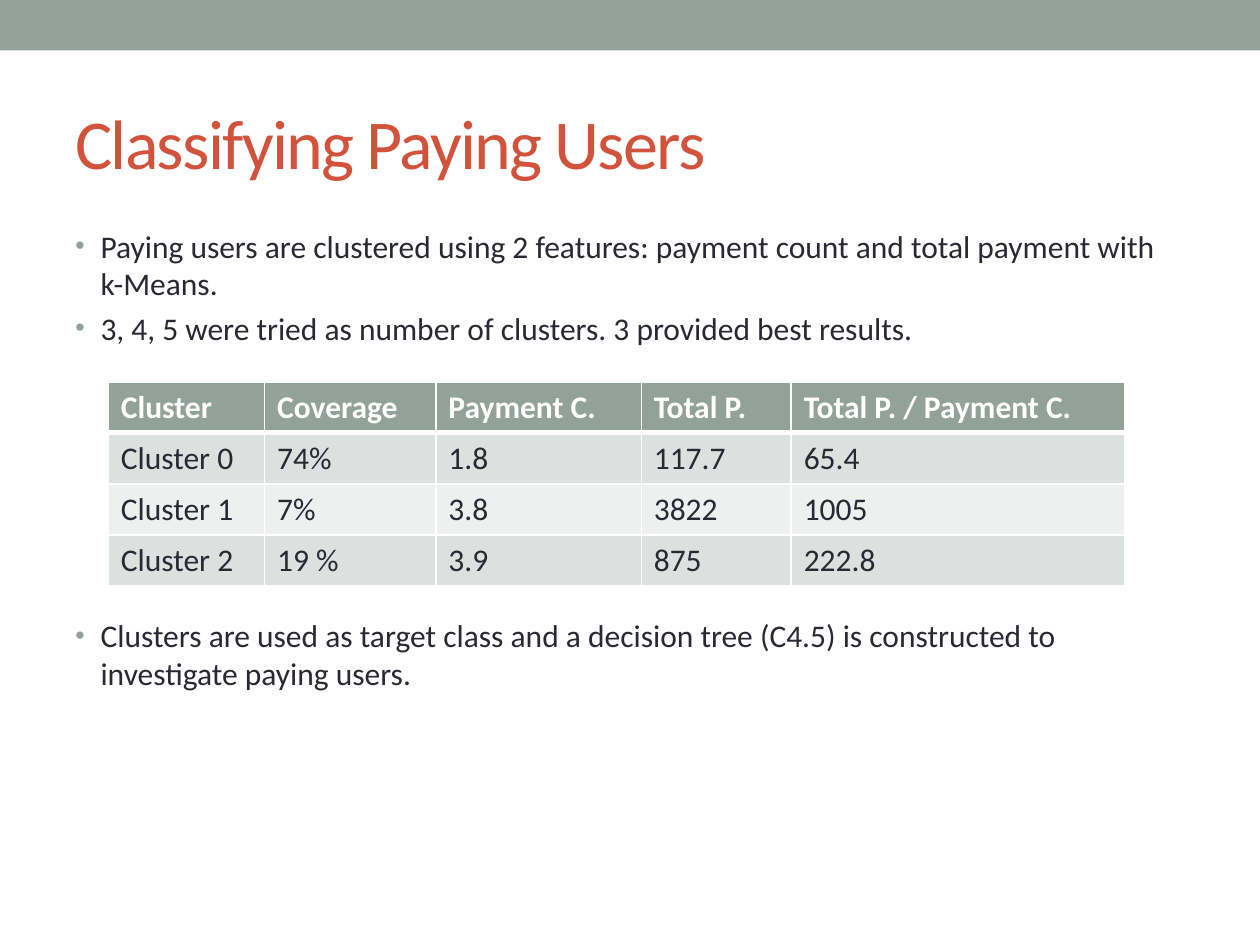
import pptx
import pptx.dml.color
import pptx.enum.shapes
import pptx.enum.text
import pptx.oxml
import pptx.oxml.ns
import pptx.util
from pptx.util import Inches

COLOURS = {"sage": "93A299", "red": "D2533C", "ink": "292934", "white": "FFFFFF",
           "dark_band": "DCE0DE", "light_band": "EEF0EF"}
NAMESPACE = pptx.oxml.ns.nsdecls("a")


def style_runs(para, size, colour, bold=False):
    for span in para.runs:
        span.font.name = "Calibri"
        span.font.size = pptx.util.Pt(size)
        span.font.bold = bold
        span.font.color.rgb = pptx.dml.color.RGBColor.from_string(COLOURS[colour])


def add_border(cell, side, width):
    """Draw a white line on one side (L, R, T or B); call before the cell is filled."""
    cell._tc.get_or_add_tcPr().append(pptx.oxml.parse_xml(
        f'<a:ln{side} {NAMESPACE} w="{pptx.util.Pt(width)}"><a:solidFill>'
        f'<a:srgbClr val="{COLOURS["white"]}"/></a:solidFill></a:ln{side}>'))


deck = pptx.Presentation()
deck.slide_width, deck.slide_height = Inches(10), Inches(7.5)
page = deck.slides.add_slide(deck.slide_layouts[6])

# Top band
band = page.shapes.add_shape(pptx.enum.shapes.MSO_SHAPE.RECTANGLE, 0, 0, Inches(10), Inches(0.4))
band.shadow.inherit = False
band.fill.solid()
band.fill.fore_color.rgb = pptx.dml.color.RGBColor.from_string(COLOURS["sage"])
band.line.fill.background()

# Title
title = page.shapes.add_textbox(Inches(0.5), Inches(0.58), Inches(9), Inches(1.08)).text_frame
title.word_wrap = True
title.vertical_anchor = pptx.enum.text.MSO_ANCHOR.MIDDLE
title.text = "Classifying Paying Users"
style_runs(title.paragraphs[0], 40, "red")
title.paragraphs[0].runs[0].font._element.set("spc", "-100")

# Bullets; the wide space before the last one leaves room for the table
bullets = [
    ("Paying users are clustered using 2 features: payment count and total payment with k-Means.", 3.6),
    ("3, 4, 5 were tried as number of clusters. 3 provided best results.", 3.6),
    ("Clusters are used as target class and a decision tree (C4.5) is constructed to "
     "investigate paying users.", 154),
]
body = page.shapes.add_textbox(Inches(0.5), Inches(1.75), Inches(9), Inches(5.33)).text_frame
body.word_wrap = True
body.text = "\n".join(text for text, gap in bullets)
for para, (text, gap) in zip(body.paragraphs, bullets):
    style_runs(para, 18, "ink")
    para.space_before = pptx.util.Pt(gap)
    properties = para._p.get_or_add_pPr()
    properties.set("marL", str(Inches(0.2)))
    properties.set("indent", str(-Inches(0.2)))
    for bullet_xml in (
        f'<a:buClr {NAMESPACE}><a:srgbClr val="{COLOURS["sage"]}"/></a:buClr>',
        f'<a:buSzPct {NAMESPACE} val="85000"/>',
        f'<a:buFont {NAMESPACE} typeface="Arial"/>',
        f'<a:buChar {NAMESPACE} char="•"/>',
    ):
        properties.append(pptx.oxml.parse_xml(bullet_xml))

# Cluster table
rows = [
    ["Cluster", "Coverage", "Payment C.", "Total P.", "Total P. / Payment C."],
    ["Cluster 0", "74%", "1.8", "117.7", "65.4"],
    ["Cluster 1", "7%", "3.8", "3822", "1005"],
    ["Cluster 2", "19 %", "3.9", "875", "222.8"],
]
row_fills = ["sage", "dark_band", "light_band", "dark_band"]
column_widths = [1.24, 1.36, 1.63, 1.19, 2.65]
table = page.shapes.add_table(len(rows), len(column_widths), Inches(0.86), Inches(3.03),
                              Inches(sum(column_widths)), Inches(1.62)).table
for column, width in zip(table.columns, column_widths):
    column.width = Inches(width)
for row_index, (values, fill) in enumerate(zip(rows, row_fills)):
    is_header = row_index == 0
    for column_index, value in enumerate(values):
        cell = table.cell(row_index, column_index)
        cell.text = value
        style_runs(cell.text_frame.paragraphs[0], 18, "white" if is_header else "ink", is_header)
        for side in "LRTB":
            thick = (row_index, side) in [(0, "B"), (1, "T")]
            add_border(cell, side, 3 if thick else 1)
        cell.fill.solid()
        cell.fill.fore_color.rgb = pptx.dml.color.RGBColor.from_string(COLOURS[fill])

deck.save("out.pptx")
